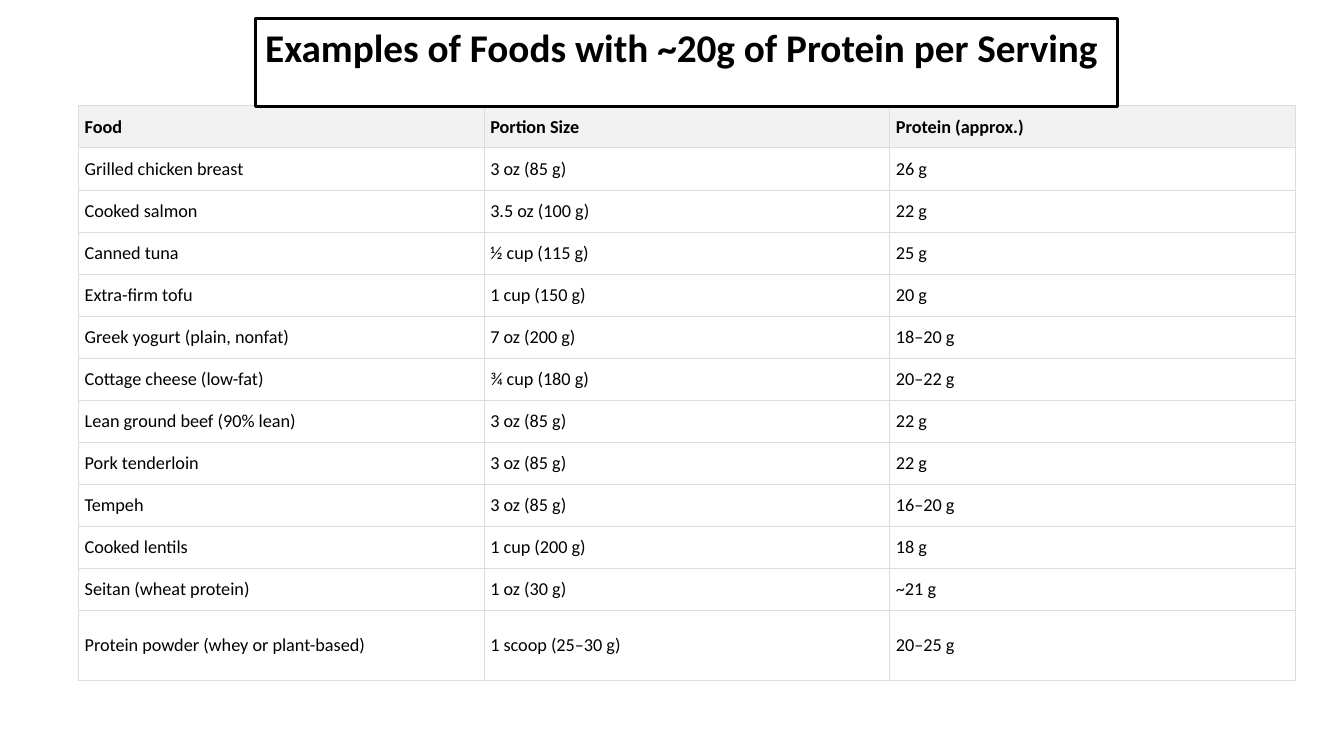
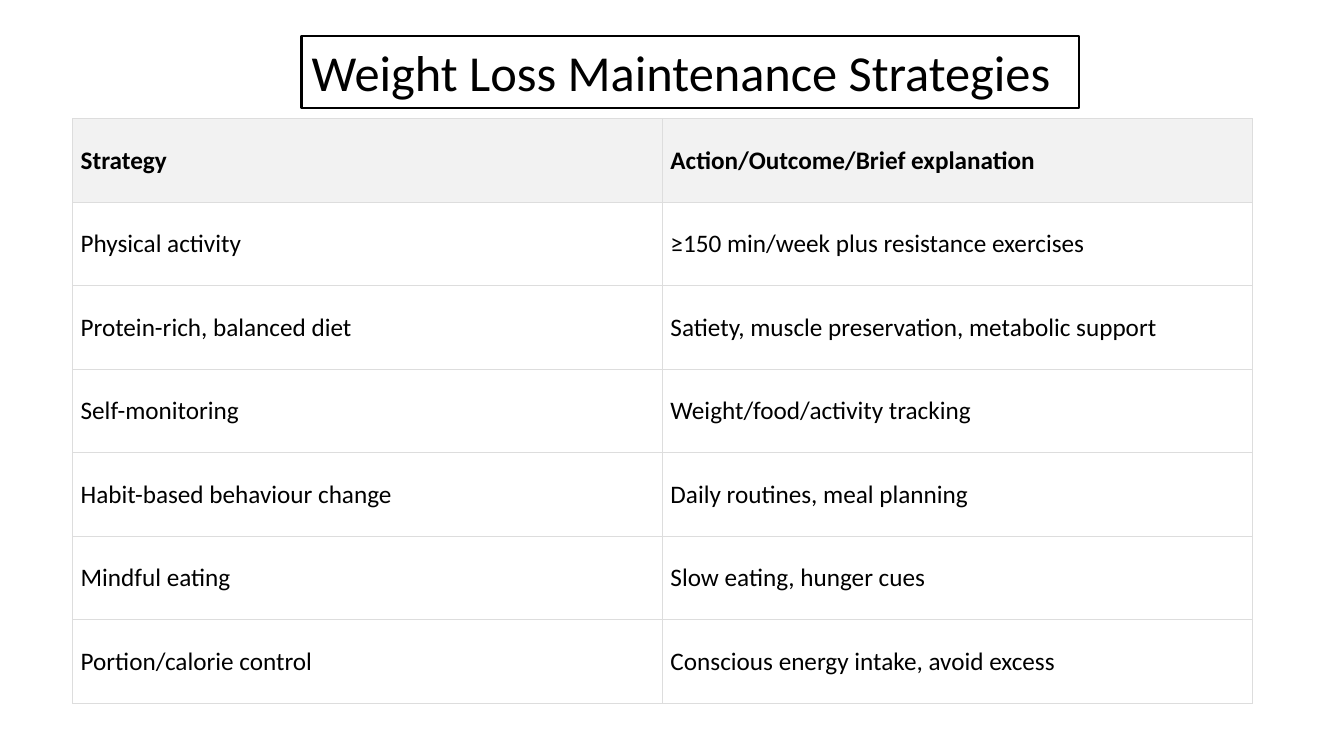
import pptx
import pptx.dml.color
import pptx.enum.text
import pptx.oxml
import pptx.oxml.ns
import pptx.util

Inches, Pt = pptx.util.Inches, pptx.util.Pt
RGB = pptx.dml.color.RGBColor.from_string
ANCHOR = pptx.enum.text.MSO_ANCHOR
COLORS = {"ink": "000000", "header": "F2F2F2", "border": "DDDDDD"}
FONT = "Calibri"
BORDER_WIDTH = Pt(0.75)

FOODS = [
    ("Food", "Portion Size", "Protein (approx.)"),
    ("Grilled chicken breast", "3 oz (85 g)", "26 g"),
    ("Cooked salmon", "3.5 oz (100 g)", "22 g"),
    ("Canned tuna", "½ cup (115 g)", "25 g"),
    ("Extra-firm tofu", "1 cup (150 g)", "20 g"),
    ("Greek yogurt (plain, nonfat)", "7 oz (200 g)", "18–20 g"),
    ("Cottage cheese (low-fat)", "¾ cup (180 g)", "20–22 g"),
    ("Lean ground beef (90% lean)", "3 oz (85 g)", "22 g"),
    ("Pork tenderloin", "3 oz (85 g)", "22 g"),
    ("Tempeh", "3 oz (85 g)", "16–20 g"),
    ("Cooked lentils", "1 cup (200 g)", "18 g"),
    ("Seitan (wheat protein)", "1 oz (30 g)", "~21 g"),
    ("Protein powder (whey or plant-based)", "1 scoop (25–30 g)", "20–25 g"),
]
STRATEGIES = [
    ("Strategy", "Action/Outcome/Brief explanation"),
    ("Physical activity", "≥150 min/week plus resistance exercises"),
    ("Protein-rich, balanced diet", "Satiety, muscle preservation, metabolic support"),
    ("Self-monitoring", "Weight/food/activity tracking"),
    ("Habit-based behaviour change", "Daily routines, meal planning"),
    ("Mindful eating", "Slow eating, hunger cues"),
    ("Portion/calorie control", "Conscious energy intake, avoid excess"),
]
SLIDES = [
    {
        "title": {"text": "Examples of Foods with ~20g of Protein per Serving",
                  "box": (2.53, 0.18, 8.55, 0.88), "size": 28, "bold": True, "outline": 2.25},
        "table": {"rows": FOODS, "box": (0.78, 1.05, 12.07, 5.7), "size": 13,
                  "inset": 0.06, "last_height": 0.69},
    },
    {
        "title": {"text": "Weight Loss Maintenance Strategies",
                  "box": (2.99, 0.36, 7.71, 0.71), "size": 36, "bold": False, "outline": 1.5},
        "table": {"rows": STRATEGIES, "box": (0.72, 1.18, 11.7, 5.8), "size": 18,
                  "inset": 0.08},
    },
]


def apply(target, values):
    for name, value in values.items():
        setattr(target, name, value)


def style_text(paragraph, size, bold):
    paragraph.alignment = pptx.enum.text.PP_ALIGN.LEFT
    apply(paragraph.font, {"name": FONT, "size": Pt(size), "bold": bold})
    paragraph.font.color.rgb = RGB(COLORS["ink"])


def add_title(slide, text, box, size, bold, outline):
    title = slide.shapes.title
    apply(title, dict(zip(("left", "top", "width", "height"), map(Inches, box))))
    title.line.color.rgb = RGB(COLORS["ink"])
    title.line.width = Pt(outline)
    frame = title.text_frame
    frame.text = text
    apply(frame, {"word_wrap": True, "vertical_anchor": ANCHOR.TOP,
                  "auto_size": pptx.enum.text.MSO_AUTO_SIZE.NONE})
    style_text(frame.paragraphs[0], size, bold)
    # The title outline lies over the top edge of the table.
    slide.shapes.element.append(title.element)


def add_borders(cell):
    properties = cell._tc.get_or_add_tcPr()
    for position, side in enumerate("LRTB"):
        properties.insert(position, pptx.oxml.parse_xml(
            f'<a:ln{side} {pptx.oxml.ns.nsdecls("a")} w="{BORDER_WIDTH}"><a:solidFill>'
            f'<a:srgbClr val="{COLORS["border"]}"/></a:solidFill></a:ln{side}>'))


def format_cell(cell, text, size, inset, is_header):
    cell.text = text
    cell.vertical_anchor = ANCHOR.MIDDLE
    apply(cell, {f"margin_{side}": Inches(inset)
                 for side in ("left", "right", "top", "bottom")})
    style_text(cell.text_frame.paragraphs[0], size, is_header)
    if is_header:
        cell.fill.solid()
        cell.fill.fore_color.rgb = RGB(COLORS["header"])
    else:
        cell.fill.background()
    add_borders(cell)


def add_grid(slide, rows, box, size, inset, last_height=None):
    """Equal columns and rows fill the box; the last row may have its own height."""
    width, height = box[2:]
    if last_height is None:
        last_height = height / len(rows)
    row_height = (height - last_height) / (len(rows) - 1)
    table = slide.shapes.add_table(len(rows), len(rows[0]), *map(Inches, box)).table
    table.horz_banding = False
    for column in table.columns:
        column.width = Inches(width / len(rows[0]))
    for index, texts in enumerate(rows):
        is_last = index == len(rows) - 1
        table.rows[index].height = Inches(last_height if is_last else row_height)
        for cell, text in zip(table.rows[index].cells, texts):
            format_cell(cell, text, size, inset, is_header=index == 0)


def main():
    deck = pptx.Presentation()
    apply(deck, {"slide_width": Inches(13.33), "slide_height": Inches(7.5)})
    title_only = deck.slide_layouts.get_by_name("Title Only")
    for content in SLIDES:
        slide = deck.slides.add_slide(title_only)
        add_grid(slide, **content["table"])
        add_title(slide, **content["title"])
    deck.save("out.pptx")


if __name__ == "__main__":
    main()
